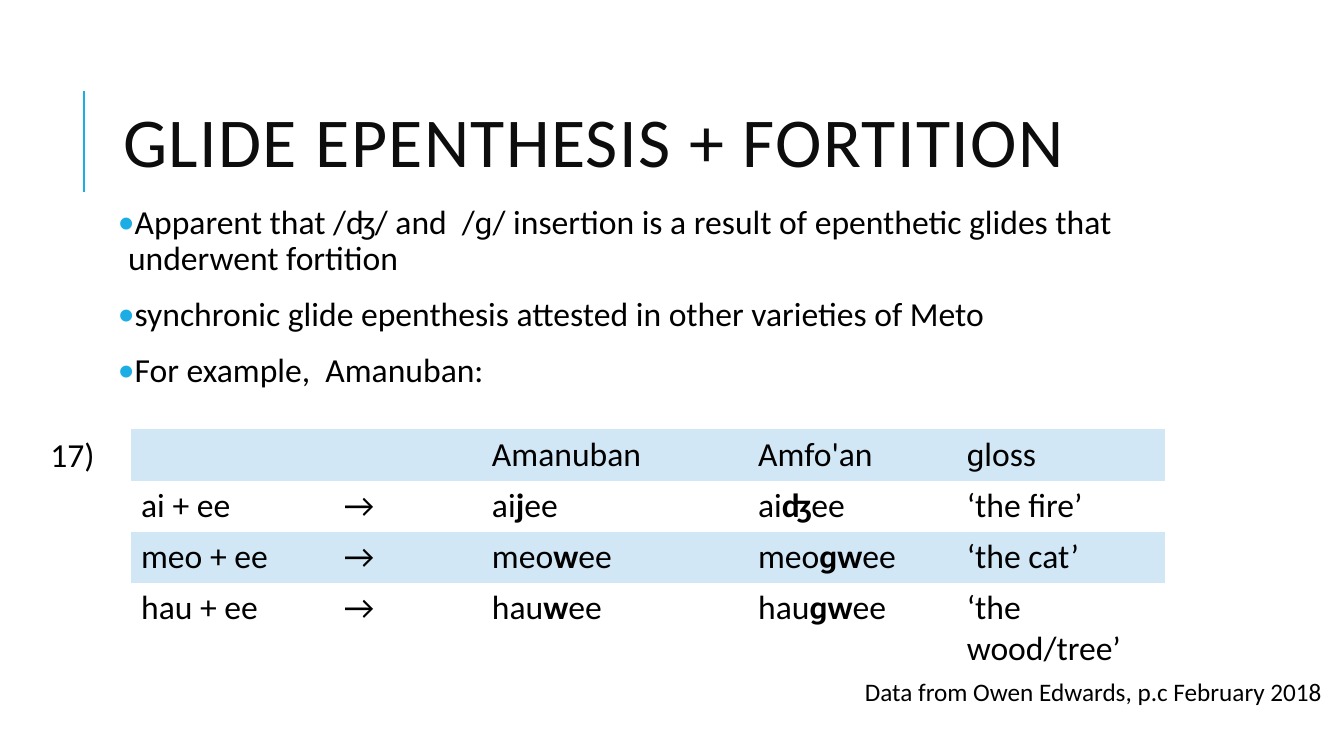
from dataclasses import dataclass

from lxml.etree import SubElement
from pptx import Presentation
from pptx.dml.color import RGBColor
from pptx.enum.shapes import MSO_CONNECTOR
from pptx.enum.text import MSO_ANCHOR, MSO_AUTO_SIZE, PP_ALIGN
from pptx.oxml.ns import qn
from pptx.util import Inches, Pt


@dataclass(frozen=True)
class Theme:
    """Colours, font and type sizes of the slide."""
    font: str = "Calibri"
    accent: str = "1CADE4"
    title_color: str = "0D0D0D"
    text_color: str = "000000"
    band: str = "D1E7F6"
    title_size: int = 50
    body_size: int = 24
    note_size: int = 18


THEME = Theme()

BULLETS = [
    "Apparent that /ʤ/ and  /ɡ/ insertion is a result of epenthetic glides that underwent fortition",
    "synchronic glide epenthesis attested in other varieties of Meto",
    "For example,  Amanuban:",
]
COLUMN_WIDTHS = [2.01, 1.47, 2.64, 2.07, 2.07]
ROW_HEIGHT = 0.41
GLIDE_ROWS = [
    ["", "", "Amanuban", "Amfo'an", "ɡloss"],
    ["ai + ee", "→", "ai*j*ee", "ai*ʤ*ee", "‘the fire’"],
    ["meo + ee", "→", "meo*w*ee", "meo*ɡw*ee", "‘the cat’"],
    ["hau + ee", "→", "hau*w*ee", "hau*ɡw*ee", "‘the wood/tree’"],
]


def write_text(paragraph, text, size=THEME.body_size, color=THEME.text_color, spacing=None):
    """Fill a paragraph, setting the parts between asterisks in bold."""
    for index, part in enumerate(text.split("*")):
        if not part:
            continue
        run = paragraph.add_run()
        run.text = part
        run.font.name = THEME.font
        run.font.size = Pt(size)
        run.font.bold = index % 2 == 1
        run.font.color.rgb = RGBColor.from_string(color)
        if spacing:
            run.font._element.set("spc", str(spacing * 100))


def place(shape, left, top, width, height):
    """Move and size a shape, in inches."""
    shape.left, shape.top = Inches(left), Inches(top)
    shape.width, shape.height = Inches(width), Inches(height)


def add_bullet(paragraph):
    """Give a paragraph a coloured bullet and a small hanging indent."""
    properties = paragraph._p.get_or_add_pPr()
    properties.set("marL", str(Inches(0.1)))
    properties.set("indent", str(-Inches(0.1)))
    color = SubElement(properties, qn("a:buClr"))
    SubElement(color, qn("a:srgbClr"), val=THEME.accent)
    SubElement(properties, qn("a:buFont"), typeface=THEME.font)
    SubElement(properties, qn("a:buChar"), char="•")


def add_title(slide, text):
    """Format the title placeholder and draw the accent line beside it."""
    line = slide.shapes.add_connector(
        MSO_CONNECTOR.STRAIGHT, Inches(0.83), Inches(1.9), Inches(0.83), Inches(0.9))
    line.line.color.rgb = RGBColor.from_string(THEME.accent)
    line.line.width = Pt(1.5)
    SubElement(line._element.spPr, qn("a:effectLst"))

    title = slide.shapes.title
    place(title, 1.12, 0.64, 10.63, 1.64)
    frame = title.text_frame
    frame.auto_size = MSO_AUTO_SIZE.NONE
    frame.vertical_anchor = MSO_ANCHOR.MIDDLE
    paragraph = frame.paragraphs[0]
    paragraph.alignment = PP_ALIGN.LEFT
    paragraph.line_spacing = 0.8
    write_text(paragraph, text, size=THEME.title_size, color=THEME.title_color, spacing=1)


def add_bullet_list(slide, items):
    """Format the body placeholder as the bullet list."""
    body = slide.placeholders[1]
    place(body, 1.12, 1.99, 10.63, 2.09)
    frame = body.text_frame
    frame.auto_size = MSO_AUTO_SIZE.NONE
    frame.margin_left = frame.margin_right = Inches(0.05)
    frame.margin_top = frame.margin_bottom = Inches(0.05)
    for index, item in enumerate(items):
        paragraph = frame.add_paragraph() if index else frame.paragraphs[0]
        add_bullet(paragraph)
        paragraph.line_spacing = 0.9
        paragraph.space_before = Pt(12 if index else 0)
        paragraph.space_after = Pt(2)
        write_text(paragraph, item)


def add_glide_table(slide, rows):
    """Add the table of forms with every other row shaded."""
    table = slide.shapes.add_table(
        len(rows), len(COLUMN_WIDTHS), Inches(1.3), Inches(4.26),
        Inches(sum(COLUMN_WIDTHS)), Inches(ROW_HEIGHT * len(rows))).table
    table.first_row = table.horz_banding = False
    for column, width in zip(table.columns, COLUMN_WIDTHS):
        column.width = Inches(width)
    properties = table._tbl.tblPr
    properties.find(qn("a:tableStyleId")).text = "{2D5ABB26-0587-4C30-8999-92F81FD0307C}"
    for row_index, row in enumerate(rows):
        for column_index, text in enumerate(row):
            cell = table.cell(row_index, column_index)
            if row_index % 2:
                cell.fill.background()
            else:
                cell.fill.solid()
                cell.fill.fore_color.rgb = RGBColor.from_string(THEME.band)
            write_text(cell.text_frame.paragraphs[0], text)


def add_label(slide, text, left, top, width, height, size=THEME.body_size, wrap=True):
    """Add a text box that grows with its text."""
    box = slide.shapes.add_textbox(Inches(left), Inches(top), Inches(width), Inches(height))
    box.text_frame.word_wrap = wrap
    box.text_frame.auto_size = MSO_AUTO_SIZE.SHAPE_TO_FIT_TEXT
    write_text(box.text_frame.paragraphs[0], text, size=size)


def main():
    """Build and save the slide."""
    presentation = Presentation()
    presentation.slide_width = Inches(13.33)
    presentation.slide_height = Inches(7.5)
    slide = presentation.slides.add_slide(presentation.slide_layouts[1])
    add_title(slide, "GLIDE EPENTHESIS + FORTITION")
    add_bullet_list(slide, BULLETS)
    add_glide_table(slide, GLIDE_ROWS)
    add_label(slide, "Data from Owen Edwards, p.c February 2018",
              8.48, 6.66, 4.74, 0.4, size=THEME.note_size, wrap=False)
    add_label(slide, "17)", 0.4, 4.26, 0.72, 0.5)
    presentation.save("out.pptx")


if __name__ == "__main__":
    main()
